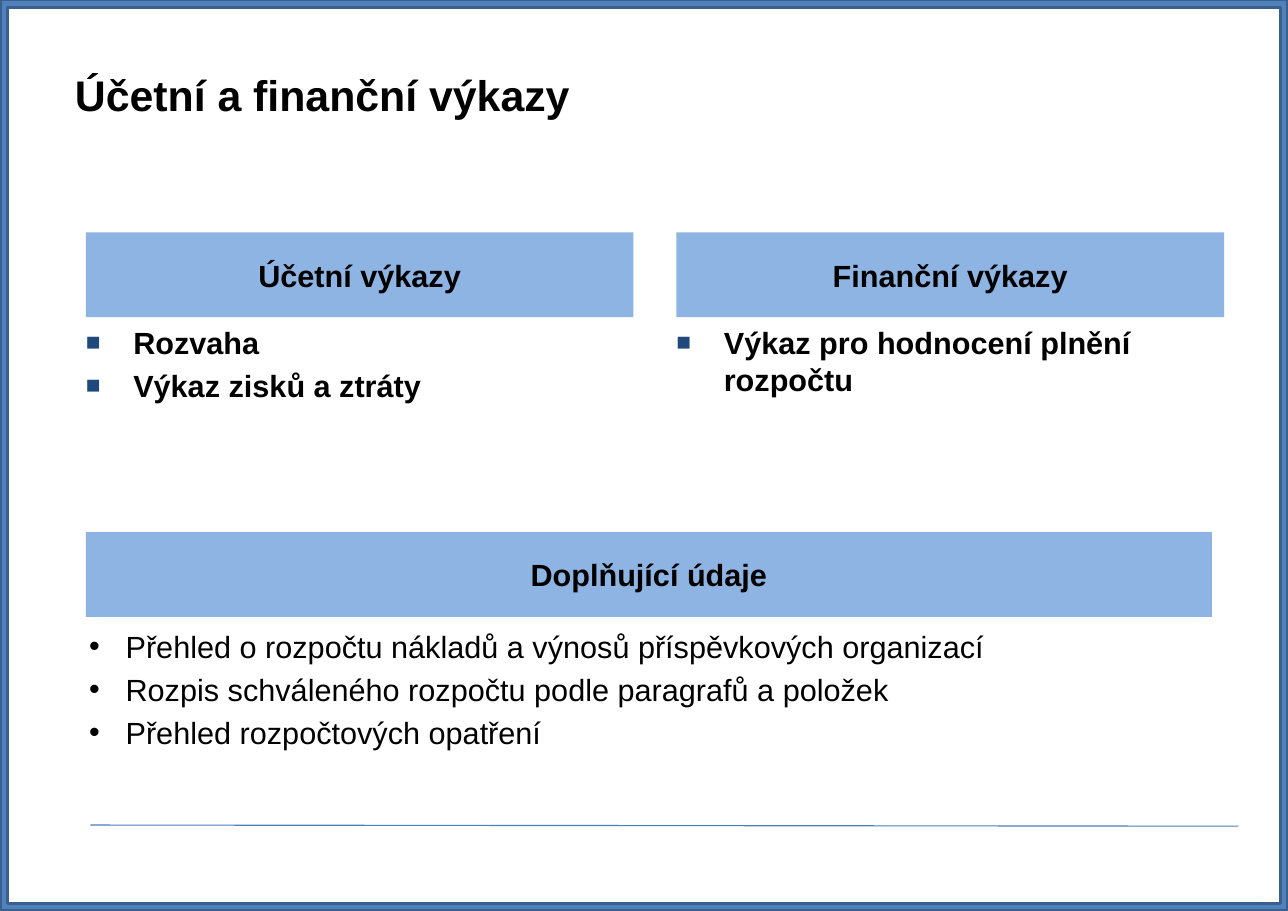
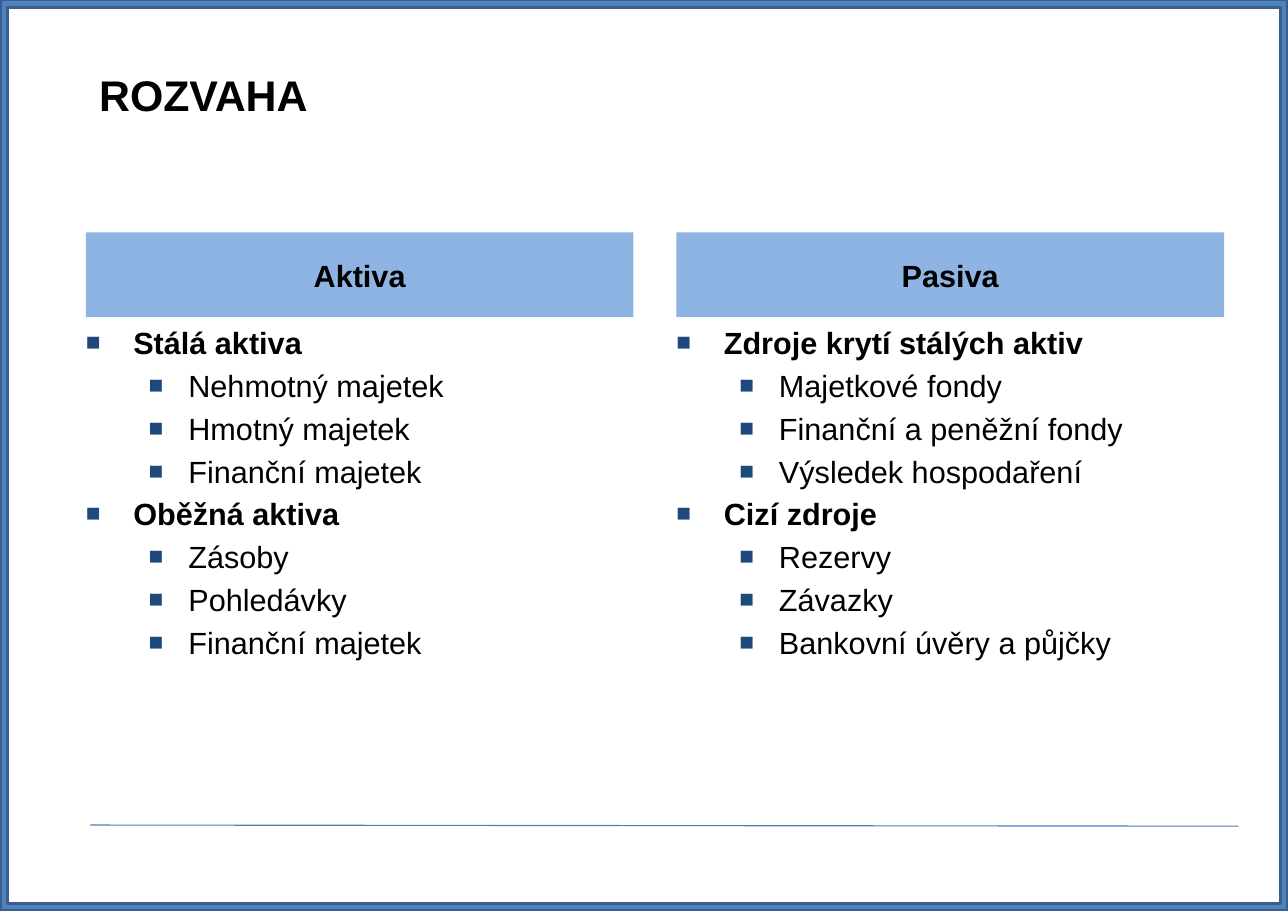
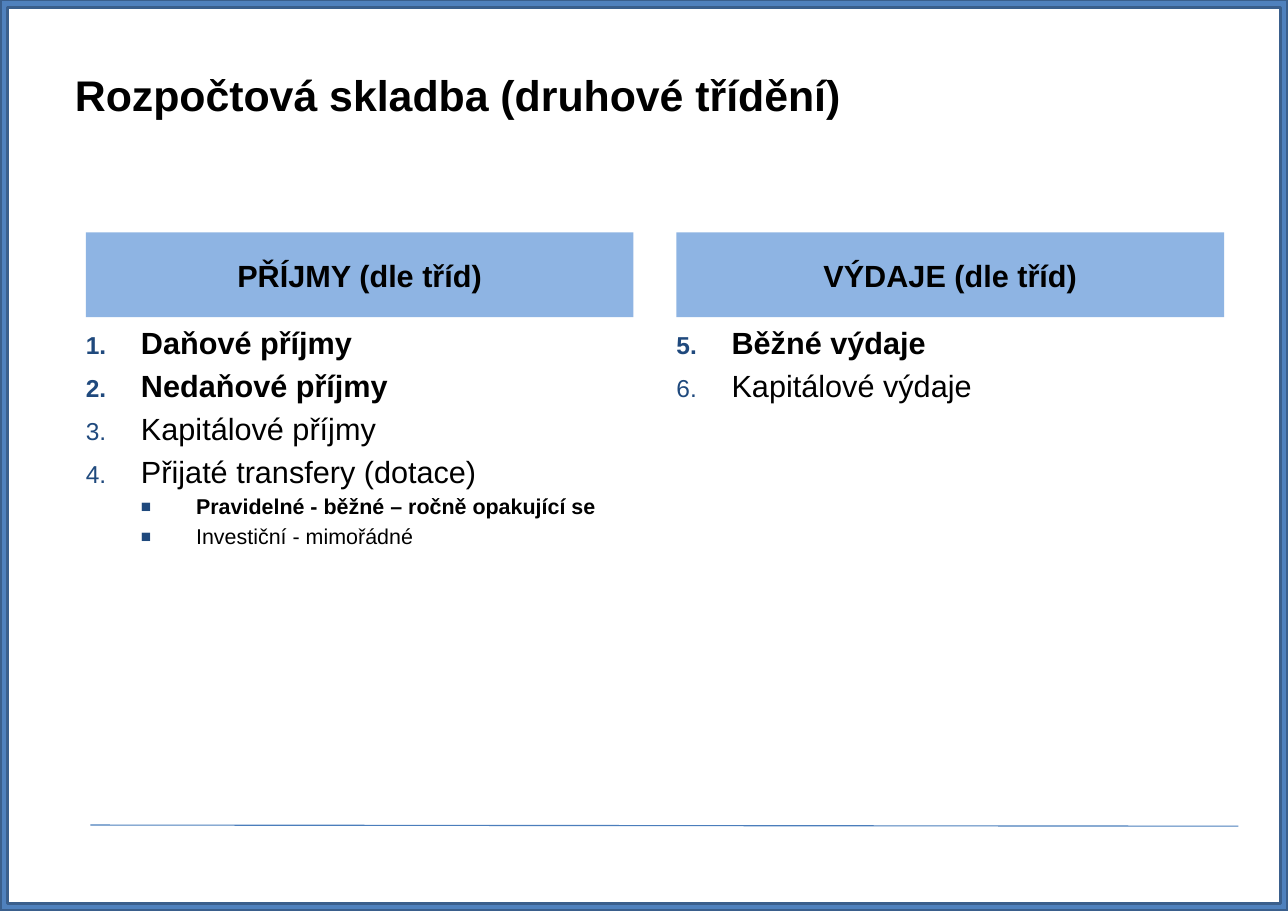
import dataclasses

import lxml.etree
import pptx
import pptx.dml.color
import pptx.enum.shapes
import pptx.enum.text
import pptx.oxml.ns
import pptx.util

PX = 9144
SLIDE_W, SLIDE_H = 1169, 827
COL_LEFTS = (78, 614)
COL_W = 497
BAND_TOP, BAND_H = 211, 77
LIST_TOP = 294


@dataclasses.dataclass(frozen=True)
class Theme:
    font: str = "Arial"
    text: str = "000000"
    frame: str = "4F81BD"
    frame_line: str = "3A5F8C"
    rule: str = "4B7EBC"
    band: str = "8EB4E3"
    bullet: str = "1F497D"
    title_size: int = 28
    body_size: int = 20
    small_size: int = 14
    line_factor: float = 1.2
    space_factor: float = 0.2


THEME = Theme()


@dataclasses.dataclass(frozen=True)
class ListStyle:
    margin: int
    hang: int
    level: int = 0
    size: int = THEME.body_size
    bold: bool = False
    char: str = "■"
    start: int = 0
    colored: bool = True


HEAD = ListStyle(43, 43, bold=True)
SUB = ListStyle(93, 36, level=1)
DOT = ListStyle(33, 33, char="•", colored=False)
NUM = ListStyle(50, 50, start=1)
NUM_BOLD = dataclasses.replace(NUM, bold=True)
NUM_5 = dataclasses.replace(NUM, start=5)
NUM_5_BOLD = dataclasses.replace(NUM_5, bold=True)
NOTE = ListStyle(100, 50, level=1, size=THEME.small_size)
NOTE_BOLD = dataclasses.replace(NOTE, bold=True)


def px(*values):
    return [pptx.util.Emu(v * PX) for v in values]


def rgb(value):
    return pptx.dml.color.RGBColor.from_string(value)


def style_runs(p, size, bold):
    for r in p.runs:
        r.font.name = THEME.font
        r.font.size = pptx.util.Pt(size)
        r.font.bold = bold
        r.font.color.rgb = rgb(THEME.text)


def clear_insets(tf):
    tf.word_wrap = True
    tf.margin_left = tf.margin_top = tf.margin_right = tf.margin_bottom = 0


def set_indent(p, margin, hang=0):
    pPr = p._p.get_or_add_pPr()
    pPr.set("marL", str(margin * PX))
    pPr.set("indent", str(-hang * PX))
    return pPr


def add_bullet(p, style):
    pPr = set_indent(p, style.margin, style.hang)

    def add(parent, tag, **attrs):
        return lxml.etree.SubElement(parent, pptx.oxml.ns.qn(tag), attrs)

    if style.colored:
        add(add(pPr, "a:buClr"), "a:srgbClr", val=THEME.bullet)
        add(pPr, "a:buSzPct", val="80000")
    add(pPr, "a:buFont", typeface=THEME.font)
    if style.start:
        add(pPr, "a:buAutoNum", type="arabicPeriod", startAt=str(style.start))
    else:
        add(pPr, "a:buChar", char=style.char)


def add_frame(slide):
    sp = slide.shapes.add_shape(
        pptx.enum.shapes.MSO_SHAPE.FRAME, *px(0, 0, SLIDE_W, SLIDE_H))
    sp.adjustments[0] = 0.008
    sp.shadow.inherit = False
    sp.fill.solid()
    sp.fill.fore_color.rgb = rgb(THEME.frame)
    sp.line.color.rgb = rgb(THEME.frame_line)
    sp.line.width = pptx.util.Pt(2)


def add_rule(slide):
    line = slide.shapes.add_connector(
        pptx.enum.shapes.MSO_CONNECTOR.STRAIGHT, *px(82, 749, 1124, 750))
    line.line.color.rgb = rgb(THEME.rule)
    line.line.width = pptx.util.Pt(0.75)
    lxml.etree.SubElement(line._element.spPr, pptx.oxml.ns.qn("a:effectLst"))


def add_title(slide, text, indent):
    sp = slide.shapes.title
    sp.left, sp.top, sp.width, sp.height = px(68, 33, 1043, 105)
    tf = sp.text_frame
    tf.text = text
    clear_insets(tf)
    tf.vertical_anchor = pptx.enum.text.MSO_ANCHOR.MIDDLE
    p = tf.paragraphs[0]
    p.alignment = pptx.enum.text.PP_ALIGN.LEFT
    set_indent(p, indent)
    style_runs(p, THEME.title_size, True)


def add_slide(prs, title, indent=0):
    slide = prs.slides.add_slide(prs.slide_layouts[5])
    add_frame(slide)
    add_rule(slide)
    add_title(slide, title, indent)
    return slide


def add_band(slide, box, text):
    sp = slide.shapes.add_shape(pptx.enum.shapes.MSO_SHAPE.RECTANGLE, *px(*box))
    sp.shadow.inherit = False
    sp.fill.solid()
    sp.fill.fore_color.rgb = rgb(THEME.band)
    sp.line.fill.background()
    tf = sp.text_frame
    tf.text = text
    clear_insets(tf)
    tf.vertical_anchor = pptx.enum.text.MSO_ANCHOR.MIDDLE
    p = tf.paragraphs[0]
    p.alignment = pptx.enum.text.PP_ALIGN.CENTER
    style_runs(p, THEME.body_size, True)


def add_list(slide, box, items):
    tf = slide.shapes.add_textbox(*px(*box)).text_frame
    clear_insets(tf)
    for i, (style, text) in enumerate(items):
        p = tf.add_paragraph() if i else tf.paragraphs[0]
        p.text = text
        p.level = style.level
        add_bullet(p, style)
        p.line_spacing = pptx.util.Pt(style.size * THEME.line_factor)
        if i:
            p.space_before = pptx.util.Pt(style.size * THEME.space_factor)
        style_runs(p, style.size, style.bold)


def add_columns(slide, columns, list_h):
    for left, (heading, items) in zip(COL_LEFTS, columns):
        add_band(slide, (left, BAND_TOP, COL_W, BAND_H), heading)
        add_list(slide, (left, LIST_TOP, COL_W, list_h), items)


def build_statements(prs):
    slide = add_slide(prs, "Účetní a finanční výkazy")
    add_columns(slide, [
        ("Účetní výkazy", [(HEAD, "Rozvaha"), (HEAD, "Výkaz zisků a ztráty")]),
        ("Finanční výkazy", [(HEAD, "Výkaz pro hodnocení plnění rozpočtu")]),
    ], 127)
    add_band(slide, (78, 483, 1022, BAND_H), "Doplňující údaje")
    add_list(slide, (81, 570, 1021, 200), [
        (DOT, "Přehled o rozpočtu nákladů a výnosů příspěvkových organizací"),
        (DOT, "Rozpis schváleného rozpočtu podle paragrafů a položek"),
        (DOT, "Přehled rozpočtových opatření"),
    ])


def build_balance_sheet(prs):
    slide = add_slide(prs, "ROZVAHA", indent=22)
    add_columns(slide, [
        ("Aktiva", [
            (HEAD, "Stálá aktiva"),
            (SUB, "Nehmotný majetek"),
            (SUB, "Hmotný majetek"),
            (SUB, "Finanční majetek"),
            (HEAD, "Oběžná aktiva"),
            (SUB, "Zásoby"),
            (SUB, "Pohledávky"),
            (SUB, "Finanční majetek"),
        ]),
        ("Pasiva", [
            (HEAD, "Zdroje krytí stálých aktiv"),
            (SUB, "Majetkové fondy"),
            (SUB, "Finanční a peněžní fondy"),
            (SUB, "Výsledek hospodaření"),
            (HEAD, "Cizí zdroje"),
            (SUB, "Rezervy"),
            (SUB, "Závazky"),
            (SUB, "Bankovní úvěry a půjčky"),
        ]),
    ], 432)


def build_budget_structure(prs):
    slide = add_slide(prs, "Rozpočtová skladba (druhové třídění)")
    add_columns(slide, [
        ("PŘÍJMY (dle tříd)", [
            (NUM_BOLD, "Daňové příjmy"),
            (NUM_BOLD, "Nedaňové příjmy"),
            (NUM, "Kapitálové příjmy"),
            (NUM, "Přijaté transfery (dotace)"),
            (NOTE_BOLD, "Pravidelné - běžné – ročně opakující se"),
            (NOTE, "Investiční - mimořádné"),
        ]),
        ("VÝDAJE (dle tříd)", [
            (NUM_5_BOLD, "Běžné výdaje"),
            (NUM_5, "Kapitálové výdaje"),
        ]),
    ], 245)


def main():
    prs = pptx.Presentation()
    prs.slide_width, prs.slide_height = px(SLIDE_W, SLIDE_H)
    build_statements(prs)
    build_balance_sheet(prs)
    build_budget_structure(prs)
    prs.save("out.pptx")


if __name__ == "__main__":
    main()
